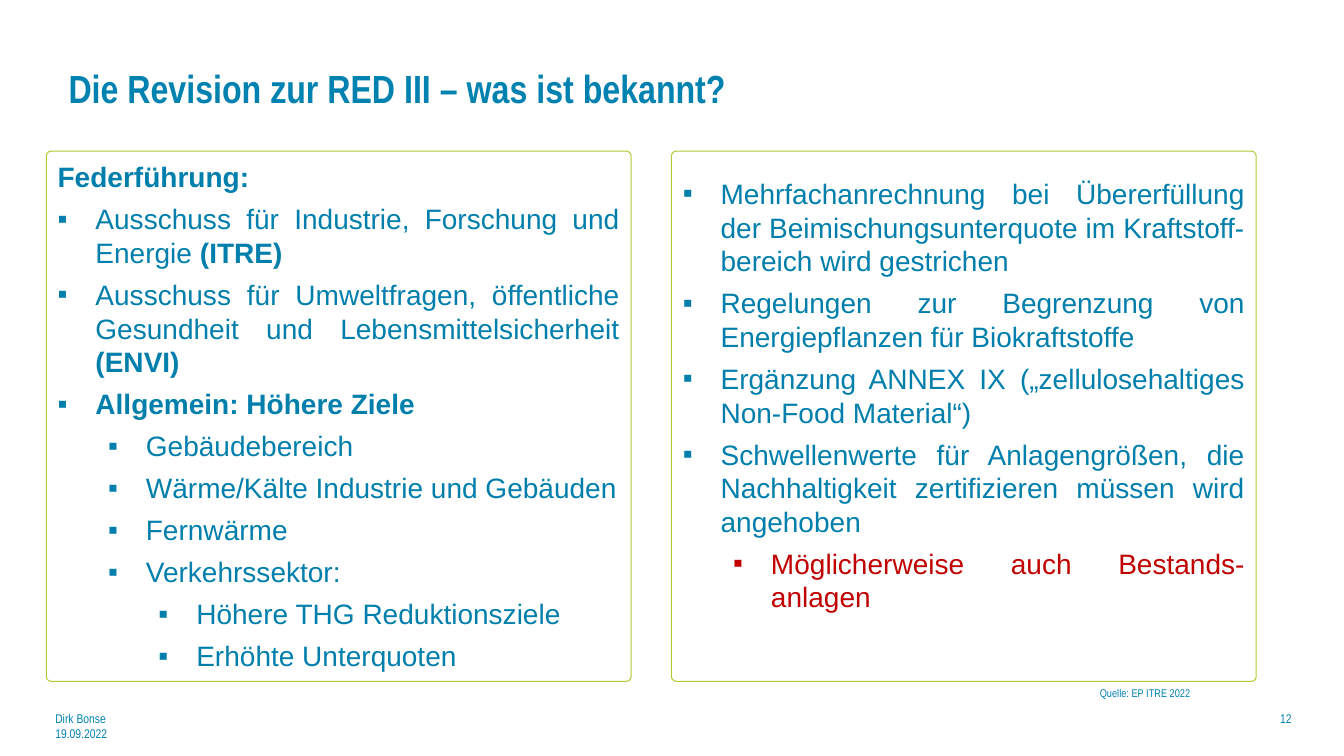
from dataclasses import dataclass

from lxml import etree
from pptx import Presentation
from pptx import util as u
from pptx.dml import color
from pptx.enum import shapes, text
from pptx.oxml import ns


@dataclass(frozen=True)
class Theme:
    heading: color.RGBColor = color.RGBColor(0x00, 0x82, 0xB0)
    body: color.RGBColor = color.RGBColor(0x00, 0x7F, 0xAC)
    warning: color.RGBColor = color.RGBColor(0xC0, 0x00, 0x00)
    border: color.RGBColor = color.RGBColor(0xAF, 0xCC, 0x35)
    white: color.RGBColor = color.RGBColor(0xFF, 0xFF, 0xFF)
    narrow_font: str = "Arial Narrow"
    body_font: str = "Arial"
    title_size: int = 28
    body_size: int = 20
    footer_size: int = 9
    source_size: int = 8


theme = Theme()


def add_run(paragraph, content, font_name, size, rgb, bold=False):
    run = paragraph.add_run()
    run.text = content
    run.font.name = font_name
    run.font.size = u.Pt(size)
    run.font.bold = bold
    run.font.color.rgb = rgb


def set_bullet(paragraph, level):
    paragraph.level = level
    properties = paragraph._p.get_or_add_pPr()
    properties.set("marL", str(u.Inches(3 / 8 + level / 2)))
    properties.set("indent", str(u.Inches(-3 / 8)))
    etree.SubElement(properties, ns.qn("a:buFont")).set("typeface", theme.body_font)
    etree.SubElement(properties, ns.qn("a:buChar")).set("char", "▪")


presentation = Presentation()
presentation.slide_width = u.Inches(13.33)
presentation.slide_height = u.Inches(7.5)
slide = presentation.slides.add_slide(presentation.slide_layouts[5])

title = slide.shapes.title
title.left, title.top = u.Inches(0.58), u.Inches(0.25)
title.width, title.height = u.Inches(8.61), u.Inches(1.25)
title.text_frame.auto_size = text.MSO_AUTO_SIZE.NONE
title.text_frame.vertical_anchor = text.MSO_ANCHOR.MIDDLE
title_paragraph = title.text_frame.paragraphs[0]
title_paragraph.alignment = text.PP_ALIGN.LEFT
add_run(title_paragraph, "Die Revision zur RED III – was ist bekannt?",
        theme.narrow_font, theme.title_size, theme.heading, True)

# Each entry: level (None means no bullet), colour, runs of (text, bold)
committees = [
    (None, theme.body, [("Federführung: ", True)]),
    (0, theme.body, [("Ausschuss für Industrie, Forschung und Energie ", False),
                     ("(ITRE) ", True)]),
    (0, theme.body, [("Ausschuss für Umweltfragen, öffentliche Gesundheit und "
                      "Lebensmittelsicherheit ", False), ("(ENVI)", True)]),
    (0, theme.body, [("Allgemein: Höhere Ziele", True)]),
    (1, theme.body, [("Gebäudebereich", False)]),
    (1, theme.body, [("Wärme/Kälte Industrie und Gebäuden", False)]),
    (1, theme.body, [("Fernwärme", False)]),
    (1, theme.body, [("Verkehrssektor:", False)]),
    (2, theme.body, [("Höhere THG Reduktionsziele", False)]),
    (2, theme.body, [("Erhöhte Unterquoten", False)]),
]
changes = [
    (0, theme.body, [("Mehrfachanrechnung bei Übererfüllung der Beimischungsunterquote "
                      "im Kraftstoff-bereich wird gestrichen", False)]),
    (0, theme.body, [("Regelungen zur Begrenzung von Energiepflanzen für "
                      "Biokraftstoffe", False)]),
    (0, theme.body, [("Ergänzung ANNEX IX („zellulosehaltiges Non-Food Material“)", False)]),
    (0, theme.body, [("Schwellenwerte für Anlagengrößen, die Nachhaltigkeit "
                      "zertifizieren müssen wird angehoben", False)]),
    (1, theme.warning, [("Möglicherweise auch Bestands-anlagen ", False)]),
]

for left, bottom_margin, entries in [(0.46, 0.05, committees), (6.66, 0.47, changes)]:
    panel = slide.shapes.add_shape(
        shapes.MSO_SHAPE.ROUNDED_RECTANGLE,
        u.Inches(left), u.Inches(1.5), u.Inches(5.8), u.Inches(5.26))
    panel.adjustments[0] = 0.009
    panel.shadow.inherit = False
    panel.fill.solid()
    panel.fill.fore_color.rgb = theme.white
    panel.line.color.rgb = theme.border
    panel.line.width = u.Pt(0.75)
    frame = panel.text_frame
    frame.word_wrap = True
    frame.vertical_anchor = text.MSO_ANCHOR.MIDDLE
    frame.margin_bottom = u.Inches(bottom_margin)
    for index, (level, rgb, runs) in enumerate(entries):
        paragraph = frame.paragraphs[0] if index == 0 else frame.add_paragraph()
        if level is not None:
            set_bullet(paragraph, level)
        paragraph.alignment = text.PP_ALIGN.JUSTIFY
        paragraph.space_after = u.Pt(6)
        for content, bold in runs:
            add_run(paragraph, content, theme.body_font, theme.body_size, rgb, bold)

notes = [
    (10.81, 6.76, 2.52, 0.24, theme.source_size, text.PP_ALIGN.LEFT, ["Quelle: EP ITRE 2022"]),
    (0.45, 7, 3.25, 0.5, theme.footer_size, text.PP_ALIGN.LEFT, ["Dirk Bonse", "19.09.2022"]),
    (10.13, 7, 2.78, 0.5, theme.footer_size, text.PP_ALIGN.RIGHT, ["12"]),
]
for left, top, width, height, size, alignment, lines in notes:
    box = slide.shapes.add_textbox(
        u.Inches(left), u.Inches(top), u.Inches(width), u.Inches(height))
    frame = box.text_frame
    frame.word_wrap = True
    for index, line in enumerate(lines):
        paragraph = frame.paragraphs[0] if index == 0 else frame.add_paragraph()
        paragraph.alignment = alignment
        add_run(paragraph, line, theme.narrow_font, size, theme.heading)

presentation.save("out.pptx")
